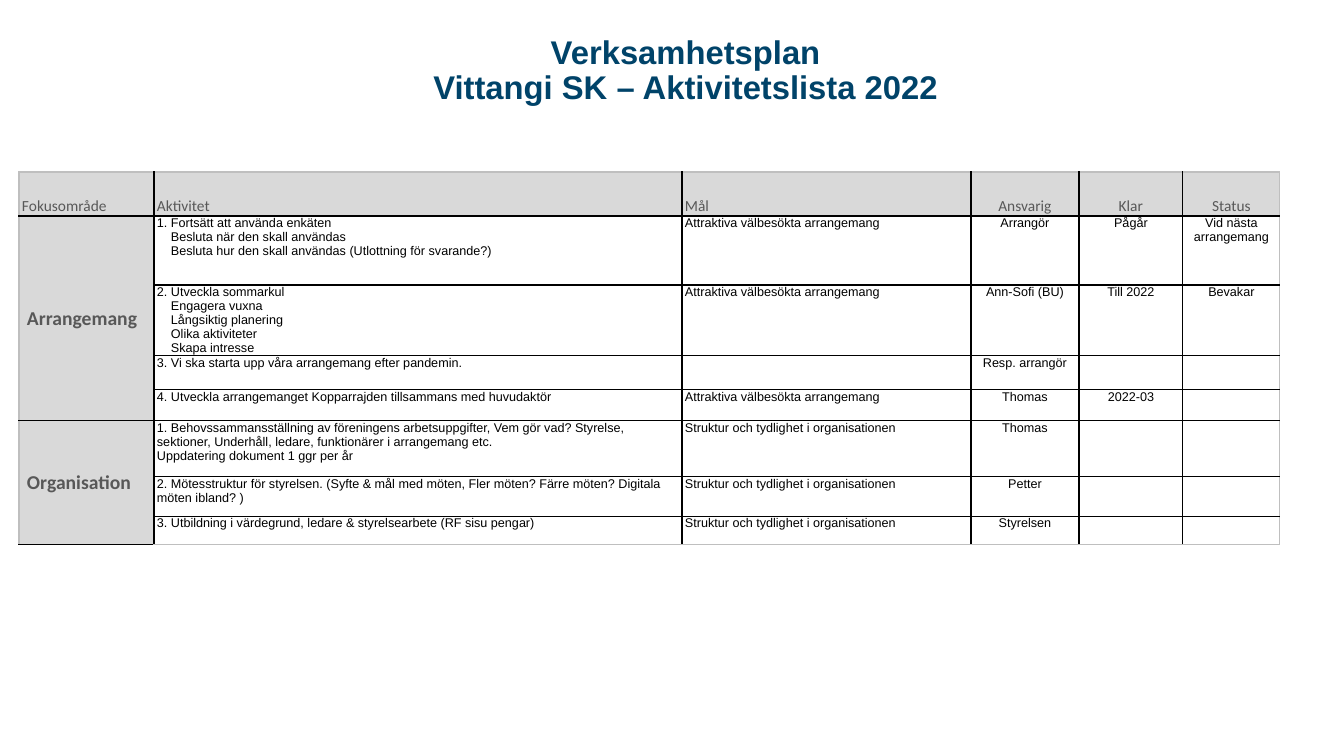
from lxml.etree import SubElement
from pptx import Presentation
from pptx.dml.color import RGBColor
from pptx.enum.text import MSO_ANCHOR, MSO_AUTO_SIZE, PP_ALIGN
from pptx.oxml import parse_xml
from pptx.oxml.ns import nsdecls, qn
from pptx.util import Emu, Pt

EMU_PER_PX = 914400 / 100.8
COLORS = {"title": "004369", "header": "D9D9D9", "label": "585858",
          "text": "000000", "body": "FFFFFF", "grid": "000000", "frame": "BFBFBF"}

TITLE = "Verksamhetsplan\vVittangi SK – Aktivitetslista 2022"
COLUMN_WIDTHS = [135, 528, 289, 108, 104, 97]
ROW_HEIGHTS = [44, 69, 70, 34, 31, 56, 40, 28]
HEADERS = ["Fokusområde", "Aktivitet", "Mål", "Ansvarig", "Klar", "Status"]
EVENT_GOAL = "Attraktiva välbesökta arrangemang"
ORGANISATION_GOAL = "Struktur och tydlighet i organisationen"
# Each activity: lines, goal, responsible, deadline, status
FOCUS_AREAS = {
    "Arrangemang": [
        (["1. Fortsätt att använda enkäten", "Besluta när den skall användas",
          "Besluta hur den skall användas (Utlottning för svarande?)"],
         EVENT_GOAL, "Arrangör", "Pågår", "Vid nästa arrangemang"),
        (["2. Utveckla sommarkul", "Engagera vuxna", "Långsiktig planering",
          "Olika aktiviteter", "Skapa intresse"],
         EVENT_GOAL, "Ann-Sofi (BU)", "Till 2022", "Bevakar"),
        (["3. Vi ska starta upp våra arrangemang efter pandemin."],
         "", "Resp. arrangör", "", ""),
        (["4. Utveckla arrangemanget Kopparrajden tillsammans med huvudaktör"],
         EVENT_GOAL, "Thomas", "2022-03", ""),
    ],
    "Organisation": [
        (["1. Behovssammansställning av föreningens arbetsuppgifter, Vem gör vad? "
          "Styrelse, sektioner, Underhåll, ledare, funktionärer i arrangemang etc."
          "\vUppdatering dokument 1 ggr per år"],
         ORGANISATION_GOAL, "Thomas", "", ""),
        (["2. Mötesstruktur för styrelsen. (Syfte & mål med möten, Fler möten? "
          "Färre möten? Digitala möten ibland? )"],
         ORGANISATION_GOAL, "Petter", "", ""),
        (["3. Utbildning i värdegrund, ledare & styrelsearbete (RF sisu pengar)"],
         ORGANISATION_GOAL, "Styrelsen", "", ""),
    ],
}


def px(length):
    return Emu(round(length * EMU_PER_PX))


def set_font(paragraph, name, size, color, bold=False):
    font = paragraph.font
    font.name, font.size, font.bold = name, Pt(size), bold
    font.color.rgb = RGBColor.from_string(COLORS[color])


def set_borders(cell, colors):
    """Draw one-point borders; colors are given left, right, top, bottom."""
    properties = cell._tc.get_or_add_tcPr()
    for index, (side, color) in enumerate(zip("LRTB", colors)):
        properties.insert(index, parse_xml(
            f'<a:ln{side} {nsdecls("a")} w="12700"><a:solidFill>'
            f'<a:srgbClr val="{COLORS[color]}"/></a:solidFill></a:ln{side}>'))


def fill_cell(cell, lines, font, fill="body", anchor=MSO_ANCHOR.TOP,
              align=PP_ALIGN.LEFT, left_margin=3):
    """Write the lines, indenting all after the first."""
    cell.fill.solid()
    cell.fill.fore_color.rgb = RGBColor.from_string(COLORS[fill])
    cell.margin_left, cell.margin_right = px(left_margin), px(3)
    cell.margin_top = cell.margin_bottom = 0
    cell.vertical_anchor = anchor
    cell.text_frame.text = "\n".join(lines)
    for index, paragraph in enumerate(cell.text_frame.paragraphs):
        paragraph.alignment = align
        if index:
            paragraph._p.get_or_add_pPr().set("marL", str(px(14)))
        set_font(paragraph, *font)
        if not paragraph.text:
            # Keeps an empty cell from stretching its row
            SubElement(paragraph._p, qn("a:endParaRPr")).set("sz", "900")


def column_alignment(column):
    return PP_ALIGN.CENTER if column >= 3 else PP_ALIGN.LEFT


def add_title(slide, left, top, width, height):
    title = slide.shapes.title
    title.left, title.top, title.width, title.height = map(px, (left, top, width, height))
    frame = title.text_frame
    frame.text = TITLE
    frame.word_wrap = True
    frame.auto_size = MSO_AUTO_SIZE.NONE
    frame.vertical_anchor = MSO_ANCHOR.BOTTOM
    paragraph = frame.paragraphs[0]
    paragraph.alignment = PP_ALIGN.CENTER
    paragraph.line_spacing = 0.9
    set_font(paragraph, "Arial", 23.4, "title", True)


def add_activity_table(slide, left, top):
    row_count, column_count = len(ROW_HEIGHTS), len(COLUMN_WIDTHS)
    table = slide.shapes.add_table(
        row_count, column_count, px(left), px(top),
        px(sum(COLUMN_WIDTHS)), px(sum(ROW_HEIGHTS))).table
    table.first_row = table.horz_banding = False
    for column, width in zip(table.columns, COLUMN_WIDTHS):
        column.width = px(width)
    for row, height in zip(table.rows, ROW_HEIGHTS):
        row.height = px(height)

    for column, header in enumerate(HEADERS):
        fill_cell(table.cell(0, column), [header], ("Calibri", 11, "label"),
                  "header", MSO_ANCHOR.BOTTOM, column_alignment(column))

    row = 1
    for area, activities in FOCUS_AREAS.items():
        first_row = row
        for lines, *details in activities:
            contents = [[], lines] + [[detail] for detail in details]
            for column, content in enumerate(contents):
                fill_cell(table.cell(row, column), content, ("Arial", 9, "text"),
                          align=column_alignment(column))
            row += 1
        label = table.cell(first_row, 0)
        label.merge(table.cell(row - 1, 0))
        fill_cell(label, [area], ("Calibri", 14, "label", True), "header",
                  MSO_ANCHOR.MIDDLE, left_margin=8)

    for row in range(row_count):
        for column in range(column_count):
            on_frame = (column == 0, column == column_count - 1,
                        row == 0, row == row_count - 1)
            set_borders(table.cell(row, column),
                        ["frame" if outer else "grid" for outer in on_frame])


def main():
    presentation = Presentation()
    presentation.slide_width, presentation.slide_height = px(1344), px(756)
    slide = presentation.slides.add_slide(presentation.slide_layouts[5])
    add_title(slide, 243, 17, 885, 95)
    add_activity_table(slide, 19, 172)
    presentation.save("out.pptx")


if __name__ == "__main__":
    main()
